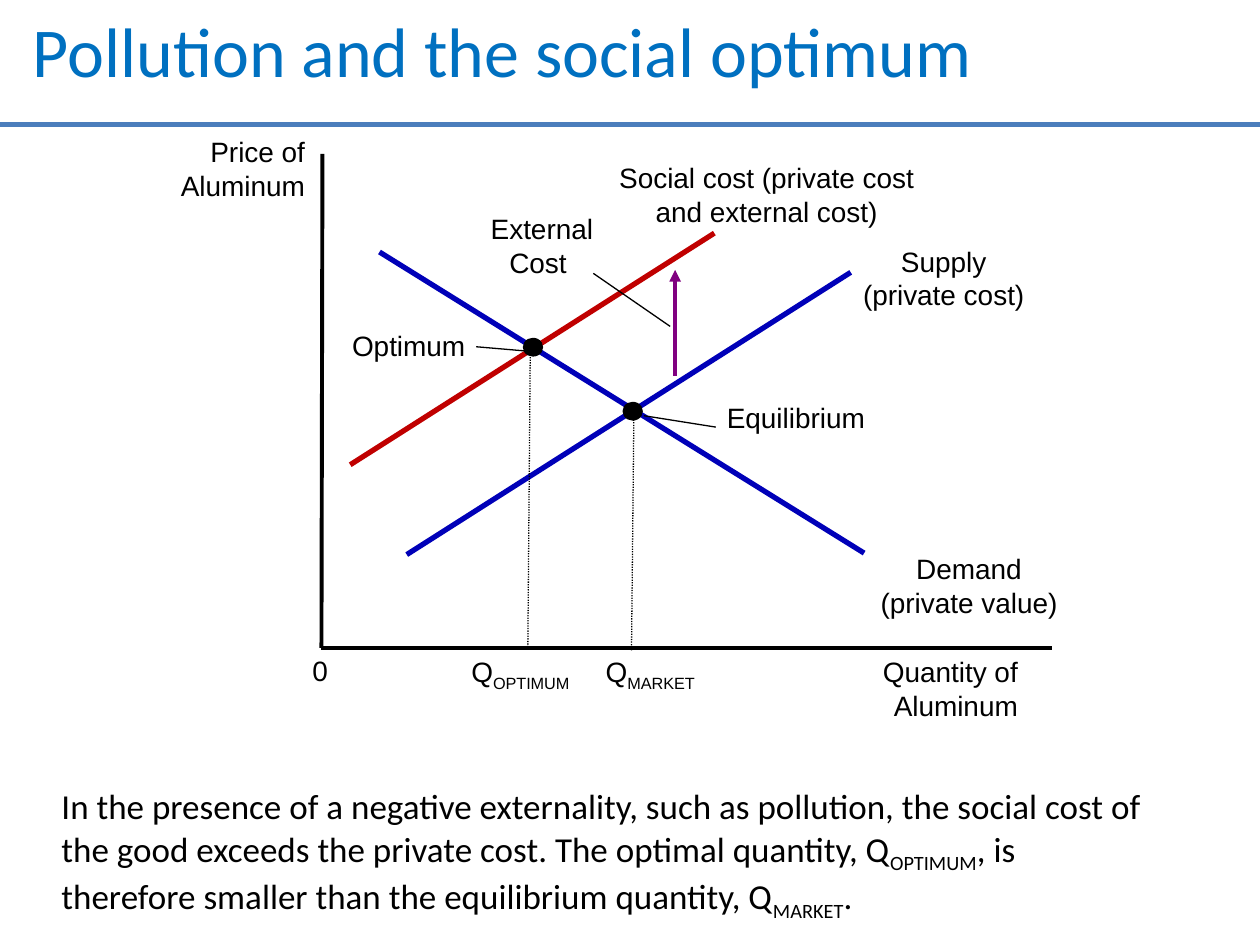
from lxml.etree import SubElement
from pptx import Presentation
from pptx.dml.color import RGBColor
from pptx.enum.dml import MSO_LINE
from pptx.enum.shapes import MSO_CONNECTOR, MSO_SHAPE
from pptx.enum.text import MSO_ANCHOR, MSO_AUTO_SIZE, PP_ALIGN
from pptx.oxml.ns import qn
from pptx.util import Cm, Pt

BLACK = RGBColor(0x00, 0x00, 0x00)
WHITE = RGBColor(0xFF, 0xFF, 0xFF)
TITLE_BLUE = RGBColor(0x00, 0x70, 0xC0)
RULE_BLUE = RGBColor(0x4B, 0x7E, 0xBC)
CURVE_BLUE = RGBColor(0x00, 0x00, 0xB8)
SOCIAL_RED = RGBColor(0xC0, 0x00, 0x00)
COST_PURPLE = RGBColor(0x80, 0x00, 0x80)


def write_text(frame, text, font="Arial", size=16, color=BLACK, align=PP_ALIGN.LEFT):
    """Each line is a paragraph; every second part between bars is a subscript."""
    for number, line in enumerate(text.split("\n")):
        paragraph = frame.paragraphs[0] if number == 0 else frame.add_paragraph()
        paragraph.alignment = align
        for position, part in enumerate(line.split("|")):
            run = paragraph.add_run()
            run.text = part
            run.font.name = font
            run.font.size = Pt(size)
            run.font.color.rgb = color
            if position % 2:
                run.font._element.set("baseline", "-25000")


class DiagramSlide:
    label_height = {1: 0.94, 2: 1.63}
    dot_size = (0.41, 0.38)

    def __init__(self, presentation):
        self.slide = presentation.slides.add_slide(presentation.slide_layouts[5])
        self.shapes = self.slide.shapes

    def title(self, text, left, top, width, height):
        shape = self.shapes.title
        shape.left, shape.top = Cm(left), Cm(top)
        shape.width, shape.height = Cm(width), Cm(height)
        frame = shape.text_frame
        frame.auto_size = MSO_AUTO_SIZE.NONE
        frame.vertical_anchor = MSO_ANCHOR.TOP
        write_text(frame, text, font="Calibri", size=40, color=TITLE_BLUE)

    def text_box(self, text, left, top, width, height, wrap=True, **text_format):
        shape = self.shapes.add_textbox(Cm(left), Cm(top), Cm(width), Cm(height))
        frame = shape.text_frame
        frame.word_wrap = wrap
        frame.auto_size = MSO_AUTO_SIZE.SHAPE_TO_FIT_TEXT
        write_text(frame, text, **text_format)

    def label(self, text, left, top, width, align=PP_ALIGN.CENTER):
        height = self.label_height[text.count("\n") + 1]
        self.text_box(text, left, top, width, height, wrap=False, align=align)

    def line(self, start, end, color=BLACK, weight=0.75, dash=None, arrow=False):
        points = [Cm(value) for value in (*start, *end)]
        connector = self.shapes.add_connector(MSO_CONNECTOR.STRAIGHT, *points)
        connector.line.color.rgb = color
        connector.line.width = Pt(weight)
        if dash is not None:
            connector.line.dash_style = dash
        if arrow:
            SubElement(connector.line._get_or_add_ln(), qn("a:tailEnd"), type="triangle")
        SubElement(connector._element.spPr, qn("a:effectLst"))

    def filled_shape(self, kind, left, top, width, height, color):
        shape = self.shapes.add_shape(kind, Cm(left), Cm(top), Cm(width), Cm(height))
        shape.shadow.inherit = False
        shape.fill.solid()
        shape.fill.fore_color.rgb = color
        shape.line.fill.background()

    def dot(self, left, top):
        self.filled_shape(MSO_SHAPE.OVAL, left, top, *self.dot_size, BLACK)


def main():
    presentation = Presentation()
    presentation.slide_width, presentation.slide_height = Cm(25.4), Cm(19.05)
    diagram = DiagramSlide(presentation)

    diagram.line((0, 2.51), (25.4, 2.51), RULE_BLUE, 3)
    diagram.title("Pollution and the social optimum", 0.41, 0.03, 24.99, 1.47)

    diagram.filled_shape(MSO_SHAPE.RECTANGLE, 6.5, 3.02, 14.55, 10.01, WHITE)
    origin = (6.48, 13.06)
    diagram.line((6.5, 3.1), origin, weight=2.25)
    diagram.line(origin, (21.21, 13.06), weight=2.25)
    diagram.text_box("Price of\nAluminum", 3.12, 2.59, 3.28, 1.63, align=PP_ALIGN.RIGHT)
    diagram.text_box("Quantity of Aluminum", 17.32, 13.08, 3.45, 1.63, align=PP_ALIGN.RIGHT)
    diagram.label("0", 6.05, 13.06, 0.84, align=PP_ALIGN.LEFT)

    for start, end, color in (
        ((7.65, 5.08), (17.42, 11.15), CURVE_BLUE),
        ((8.2, 11.18), (17.15, 5.49), CURVE_BLUE),
        ((7.06, 9.37), (14.4, 4.7), SOCIAL_RED),
    ):
        diagram.line(start, end, color, 3)
    diagram.line((13.61, 7.57), (13.61, 5.44), COST_PURPLE, 2.25, arrow=True)

    for start, end in (
        ((12.78, 8.2), (12.73, 13.13)),
        ((10.69, 6.99), (10.64, 13.11)),
    ):
        diagram.line(start, end, dash=MSO_LINE.ROUND_DOT)

    for start, end in (
        ((9.6, 6.99), (10.77, 7.09)),
        ((11.96, 5.51), (13.51, 6.58)),
        ((12.98, 8.38), (14.43, 8.61)),
    ):
        diagram.line(start, end)

    diagram.dot(12.55, 8.1)
    diagram.dot(10.54, 6.81)

    for text, left, top, width in (
        ("Demand\n(private value)", 17.48, 11, 4.11),
        ("Supply\n(private cost)", 17.12, 4.8, 3.81),
        ("Social cost (private cost\nand external cost)", 12.19, 3.12, 6.53),
        ("External\nCost ", 9.63, 4.14, 2.59),
        ("Optimum", 6.83, 6.5, 2.82),
        ("Equilibrium", 14.38, 7.95, 3.33),
        ("Q|OPTIMUM", 9.12, 13.08, 2.74),
        ("Q|MARKET", 11.84, 13.08, 2.54),
    ):
        diagram.label(text, left, top, width)

    diagram.text_box(
        "In the presence of a negative externality, such as pollution, the social cost of "
        "the good exceeds the private cost. The optimal quantity, Q|OPTIMUM|, is therefore "
        "smaller than the equilibrium quantity, Q|MARKET|.",
        0.99, 15.7, 22.56, 2.82, font="Calibri", size=20,
    )
    presentation.save("out.pptx")


if __name__ == "__main__":
    main()
